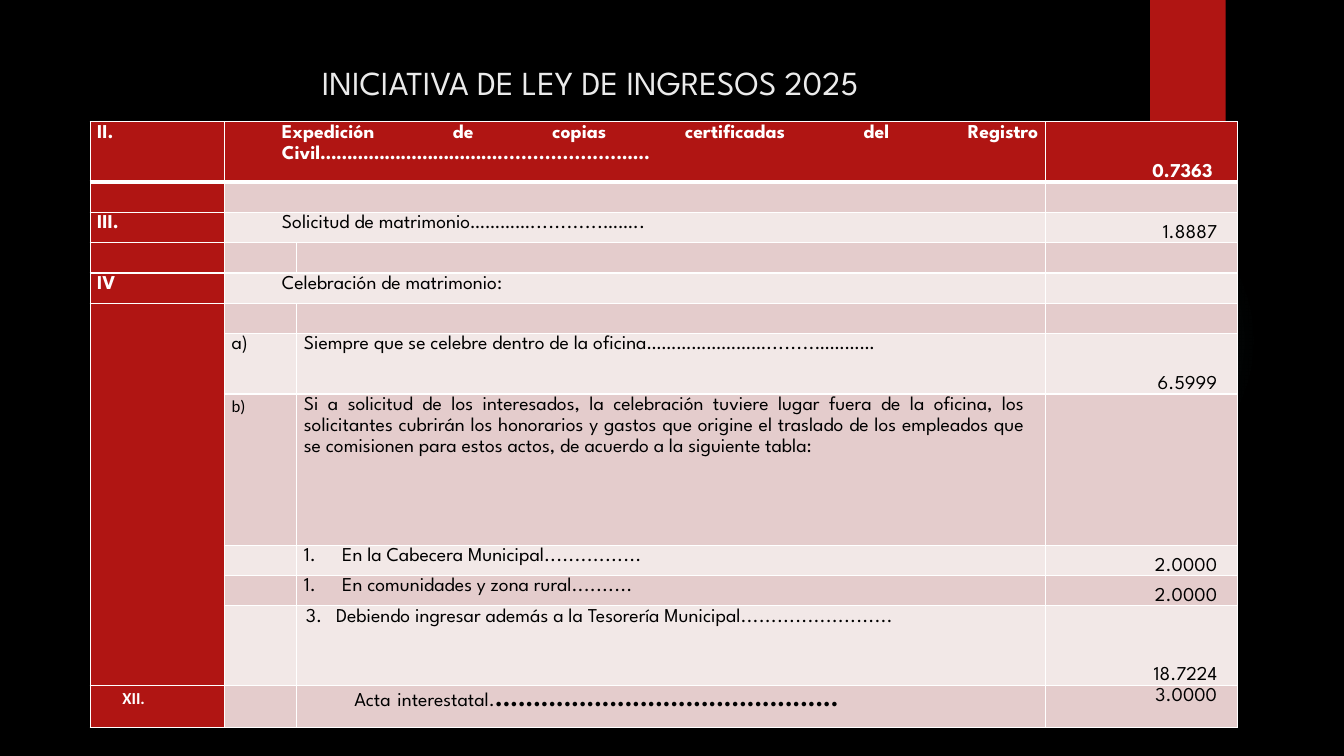
import dataclasses
import typing

import pptx
import pptx.dml.color
import pptx.enum.shapes
import pptx.enum.text
import pptx.oxml
import pptx.oxml.ns
import pptx.util

Pt = pptx.util.Pt
ALIGN = pptx.enum.text.PP_ALIGN
ANCHOR = pptx.enum.text.MSO_ANCHOR
COLORS = {"black": "000000", "red": "B01513", "rose": "E4CCCC", "pale": "F2E8E7",
          "white": "FFFFFF", "title": "EBEBEB", "glow": "50B9C1"}
FONT = "League Spartan"
COLUMN_WIDTHS = (96, 51.7, 535, 136.7)
ROW_HEIGHTS = (43.2, 21.6, 21.6, 21.6, 21.6, 21.6, 43.2, 108, 21.6, 21.6, 56.9, 30.2)
AMOUNT_COLUMN = 3
XMLNS = pptx.oxml.ns.nsdecls("a")


@dataclasses.dataclass(frozen=True)
class Piece:
    text: str
    size: float = 14
    bold: bool = False
    font: str = FONT


@dataclasses.dataclass(frozen=True)
class Entry:
    row: int
    column: int
    pieces: tuple[Piece, ...]
    left: float = 0
    hanging: float = 0
    numbered: bool = False
    right_inset: float = 5
    anchor: typing.Any = ANCHOR.TOP


def label(row: int, column: int, text: str, left: float = 0, bold: bool = False,
          **options: typing.Any) -> Entry:
    return Entry(row, column, (Piece(text, bold=bold),), left, **options)


def amount(row: int, text: str, bold: bool = False, right_inset: float = 14.3,
           anchor: typing.Any = ANCHOR.BOTTOM) -> Entry:
    return Entry(row, AMOUNT_COLUMN, (Piece(text, bold=bold),),
                 right_inset=right_inset, anchor=anchor)


ENTRIES = (
    label(0, 0, "II.", bold=True),
    label(0, 1, "Expedición de copias certificadas del Registro "
          "Civil…………………………….....................…..", 36, bold=True),
    amount(0, "0.7363", bold=True, right_inset=17.5),
    label(2, 0, "III.", bold=True),
    label(2, 1, "Solicitud de matrimonio…………............……..", 36),
    amount(2, "1.8887"),
    label(4, 0, "IV", bold=True),
    label(4, 1, "Celebración de matrimonio:", 36),
    label(6, 1, "a)"),
    label(6, 2, "Siempre que se celebre dentro de la oficina……………………........…………"),
    amount(6, "6.5999"),
    Entry(7, 1, (Piece("b)", 12, font="Calibri"),)),
    label(7, 2, "Si a solicitud de los interesados, la celebración tuviere lugar fuera de "
          "la oficina, los solicitantes cubrirán los honorarios y gastos que origine el "
          "traslado de los empleados que se comisionen para estos actos, de acuerdo a la "
          "siguiente tabla:", right_inset=15),
    label(8, 2, "En la Cabecera Municipal................", 27.4, hanging=27.4, numbered=True),
    amount(8, "2.0000"),
    label(9, 2, "En comunidades y zona rural..........", 27.4, hanging=27.4, numbered=True),
    amount(9, "2.0000"),
    label(10, 2, "3.\tDebiendo ingresar además a la Tesorería Municipal.........................",
          23, hanging=21.5),
    amount(10, "18.7224"),
    Entry(11, 0, (Piece("XII.", 12, True, "Calibri"),), 18),
    Entry(11, 2, (Piece("Acta"), Piece(" ", 18, True), Piece("interestatal."),
                  Piece("." * 45, 18, True)), 36),
    amount(11, "3.0000", anchor=ANCHOR.TOP),
)


def rgb(name: str) -> pptx.dml.color.RGBColor:
    return pptx.dml.color.RGBColor.from_string(COLORS[name])


def format_run(run: typing.Any, piece: Piece, color: str) -> None:
    run.font.name, run.font.size, run.font.bold = piece.font, Pt(piece.size), piece.bold
    run.font.color.rgb = rgb(color)


def add_backdrop(slide: typing.Any) -> None:
    """Black background, faint round glow and red ribbon."""
    slide.background.fill.solid()
    slide.background.fill.fore_color.rgb = rgb("black")
    kinds = pptx.enum.shapes.MSO_SHAPE
    glow = slide.shapes.add_shape(kinds.OVAL, Pt(677.5), Pt(131.8), Pt(221.8), Pt(221.8))
    ribbon = slide.shapes.add_shape(kinds.RECTANGLE, Pt(821.5), 0, Pt(54), Pt(90))
    for shape in (glow, ribbon):
        shape.shadow.inherit = False
        shape.line.fill.background()
    ribbon.fill.solid()
    ribbon.fill.fore_color.rgb = rgb("red")
    stops = "".join(
        f'<a:gs pos="{position}000"><a:srgbClr val="{COLORS["glow"]}">'
        f'<a:alpha val="{alpha}000"/></a:srgbClr></a:gs>'
        for position, alpha in ((0, 7), (36, 6), (69, 0), (100, 0)))
    gradient = pptx.oxml.parse_xml(
        f'<a:gradFill {XMLNS}><a:gsLst>{stops}</a:gsLst><a:path path="circle">'
        '<a:fillToRect l="50000" t="50000" r="50000" b="50000"/></a:path></a:gradFill>')
    glow._element.spPr.find(pptx.oxml.ns.qn("a:prstGeom")).addnext(gradient)


def add_title(slide: typing.Any) -> None:
    title = slide.shapes.title
    title.left, title.top, title.width, title.height = Pt(51), Pt(36), Pt(741), Pt(44.6)
    title.text_frame.text = "INICIATIVA DE LEY DE INGRESOS 2025"
    title.text_frame.vertical_anchor = ANCHOR.MIDDLE
    heading = title.text_frame.paragraphs[0]
    heading.alignment = ALIGN.CENTER
    format_run(heading.runs[0], Piece("", 24), "title")


def style_cell(cell: typing.Any, row: int, column: int) -> None:
    """Fill, insets, white borders and the size that empty cells keep."""
    cell.fill.solid()
    banding = "rose" if row % 2 else "pale"
    cell.fill.fore_color.rgb = rgb("red" if row == 0 or column == 0 else banding)
    cell.margin_left = cell.margin_right = Pt(5)
    cell.margin_top = cell.margin_bottom = 0
    borders = {"lnL": 1, "lnR": 1, "lnT": 3 if row == 1 else 1, "lnB": 1 if row else 3}
    for index, (side, width) in enumerate(borders.items()):
        cell._tc.get_or_add_tcPr().insert(index, pptx.oxml.parse_xml(
            f'<a:{side} {XMLNS} w="{Pt(width)}"><a:solidFill>'
            f'<a:srgbClr val="{COLORS["white"]}"/></a:solidFill></a:{side}>'))
    cell.text_frame.paragraphs[0]._p.append(
        pptx.oxml.parse_xml(f'<a:endParaRPr {XMLNS} sz="1400"/>'))


def write_entry(cell: typing.Any, entry: Entry) -> None:
    cell.vertical_anchor = entry.anchor
    cell.margin_right = Pt(entry.right_inset)
    paragraph = cell.text_frame.paragraphs[0]
    paragraph.alignment = ALIGN.RIGHT if entry.column == AMOUNT_COLUMN else ALIGN.JUSTIFY
    paragraph.line_spacing = 1.15
    properties = paragraph._p.get_or_add_pPr()
    properties.set("marL", str(Pt(entry.left)))
    properties.set("indent", str(-Pt(entry.hanging)))
    if entry.numbered:
        properties.append(
            pptx.oxml.parse_xml(f'<a:buAutoNum {XMLNS} type="arabicPeriod"/>'))
    color = "white" if entry.row == 0 or entry.column == 0 else "black"
    for piece in entry.pieces:
        run = paragraph.add_run()
        run.text = piece.text
        format_run(run, piece, color)


def add_fee_table(slide: typing.Any) -> None:
    fees = slide.shapes.add_table(
        len(ROW_HEIGHTS), len(COLUMN_WIDTHS), Pt(64.4), Pt(87),
        Pt(sum(COLUMN_WIDTHS)), Pt(sum(ROW_HEIGHTS))).table
    fees.first_row = fees.horz_banding = False
    for column, width in zip(fees.columns, COLUMN_WIDTHS):
        column.width = Pt(width)
    for row, height in zip(fees.rows, ROW_HEIGHTS):
        row.height = Pt(height)
    for row in range(len(ROW_HEIGHTS)):
        for column in range(len(COLUMN_WIDTHS)):
            style_cell(fees.cell(row, column), row, column)
    for row in (0, 1, 2, 4):
        fees.cell(row, 1).merge(fees.cell(row, 2))
    fees.cell(5, 0).merge(fees.cell(10, 0))
    for entry in ENTRIES:
        write_entry(fees.cell(entry.row, entry.column), entry)


def main() -> None:
    deck = pptx.Presentation()
    deck.slide_width, deck.slide_height = Pt(960), Pt(540)
    slide = deck.slides.add_slide(deck.slide_layouts[5])
    add_backdrop(slide)
    add_title(slide)
    add_fee_table(slide)
    deck.save("out.pptx")


if __name__ == "__main__":
    main()
